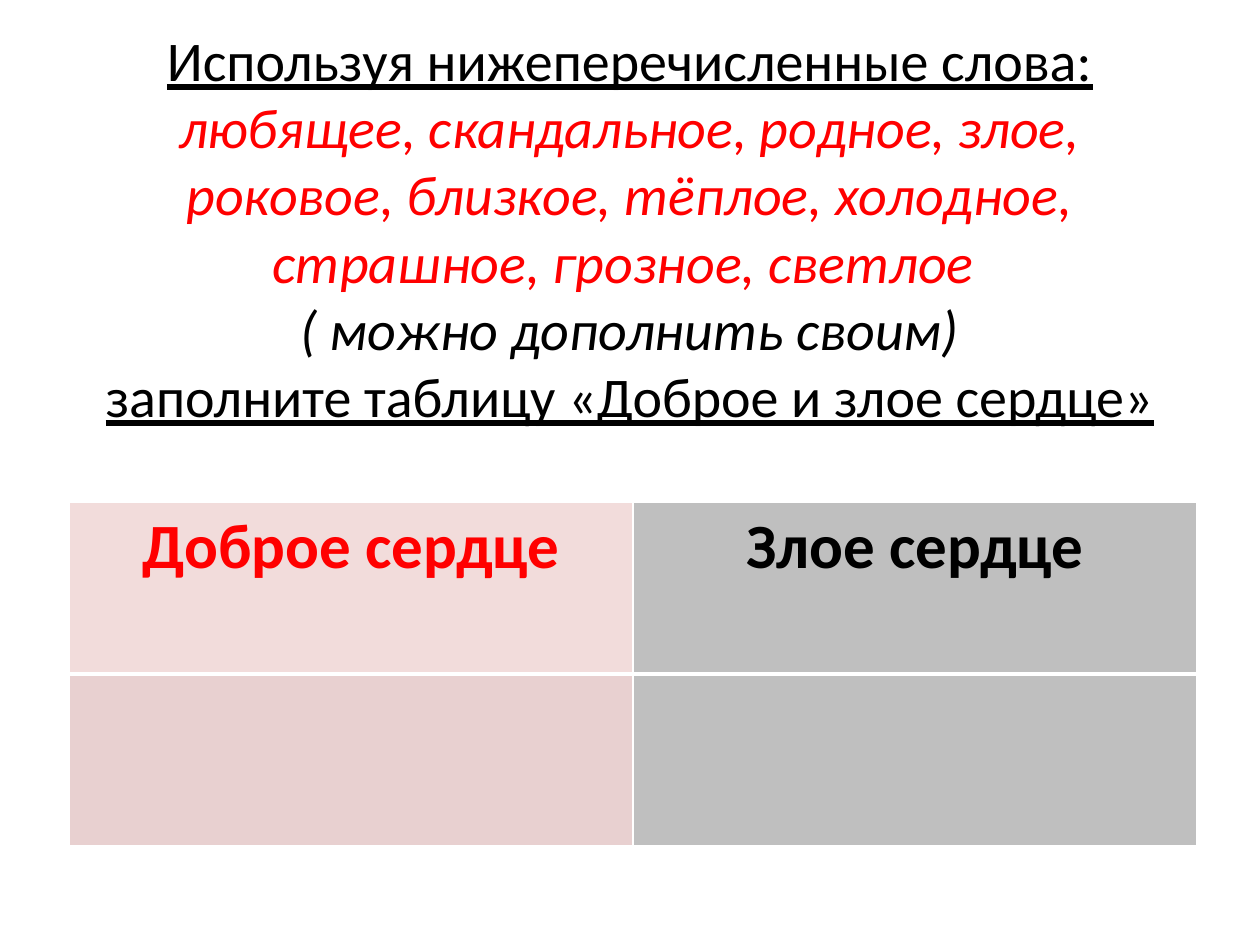
from pptx import Presentation
from pptx.dml.color import RGBColor
from pptx.enum.text import MSO_ANCHOR, MSO_AUTO_SIZE, PP_ALIGN
from pptx.oxml.ns import qn
from pptx.util import Emu, Pt
from lxml.etree import SubElement

EMU_PER_PX = 914400 / 126
FONT = "Calibri"
BLACK = RGBColor(0x00, 0x00, 0x00)
RED = RGBColor(0xFF, 0x00, 0x00)
WHITE = RGBColor(0xFF, 0xFF, 0xFF)
PINK = RGBColor(0xF2, 0xDC, 0xDB)
DUSTY_PINK = RGBColor(0xE8, 0xD0, 0xD0)
GRAY = RGBColor(0xBF, 0xBF, 0xBF)

TASK_LINES = [
    ("Используя нижеперечисленные слова:", {"underline": True}),
    ("любящее, скандальное, родное, злое, роковое, близкое, тёплое, "
     "холодное, страшное, грозное, светлое ", {"color": RED, "italic": True}),
    ("( можно дополнить своим)", {"italic": True}),
    ("заполните таблицу «Доброе и злое сердце»", {"underline": True}),
]
HEADINGS = [("Доброе сердце", RED), ("Злое сердце", BLACK)]
ROW_FILLS = [(PINK, GRAY), (DUSTY_PINK, GRAY)]


def px(length):
    return Emu(round(length * EMU_PER_PX))


def add_text(paragraph, text, size=32, color=BLACK, bold=False,
             italic=False, underline=False):
    paragraph.alignment = PP_ALIGN.CENTER
    run = paragraph.add_run()
    run.text = text
    font = run.font
    font.name, font.size = FONT, Pt(size)
    font.bold, font.italic, font.underline = bold, italic, underline
    font.color.rgb = color


def set_borders(cell, bottom):
    """Draw white cell borders, 1 pt wide except for the bottom one."""
    properties = cell._tc.get_or_add_tcPr()
    widths = {"a:lnL": 1, "a:lnR": 1, "a:lnT": 1, "a:lnB": bottom}
    for index, (tag, width) in enumerate(widths.items()):
        line = SubElement(properties, qn(tag), w=str(Pt(width)))
        fill = SubElement(line, qn("a:solidFill"))
        SubElement(fill, qn("a:srgbClr"), val=str(WHITE))
        properties.insert(index, line)


def place_task(slide, left, top, width, height):
    title = slide.shapes.title
    title.left, title.top = px(left), px(top)
    title.width, title.height = px(width), px(height)
    frame = title.text_frame
    frame.word_wrap = True
    frame.auto_size = MSO_AUTO_SIZE.NONE
    frame.vertical_anchor = MSO_ANCHOR.MIDDLE
    frame.margin_bottom = px(73)
    paragraph = frame.paragraphs[0]
    for index, (text, text_format) in enumerate(TASK_LINES):
        if index:
            paragraph.add_line_break()
        add_text(paragraph, text, **text_format)


def place_heart_table(slide, left, top, width, height):
    rows, columns = len(ROW_FILLS), len(HEADINGS)
    table = slide.shapes.add_table(
        rows, columns, px(left), px(top), px(width), px(height)).table
    for row, fills in enumerate(ROW_FILLS):
        for column, color in enumerate(fills):
            cell = table.cell(row, column)
            cell.fill.solid()
            cell.fill.fore_color.rgb = color
            set_borders(cell, bottom=3 if row == 0 else 1)
    for column, (text, color) in enumerate(HEADINGS):
        paragraph = table.cell(0, column).text_frame.paragraphs[0]
        add_text(paragraph, text, size=36, color=color, bold=True)


def main():
    presentation = Presentation()
    presentation.slide_width, presentation.slide_height = px(1260), px(945)
    slide = presentation.slides.add_slide(presentation.slide_layouts[5])
    place_task(slide, 63, 38, 1134, 445)
    place_heart_table(slide, 69, 502, 1128, 344)
    presentation.save("out.pptx")


if __name__ == "__main__":
    main()
